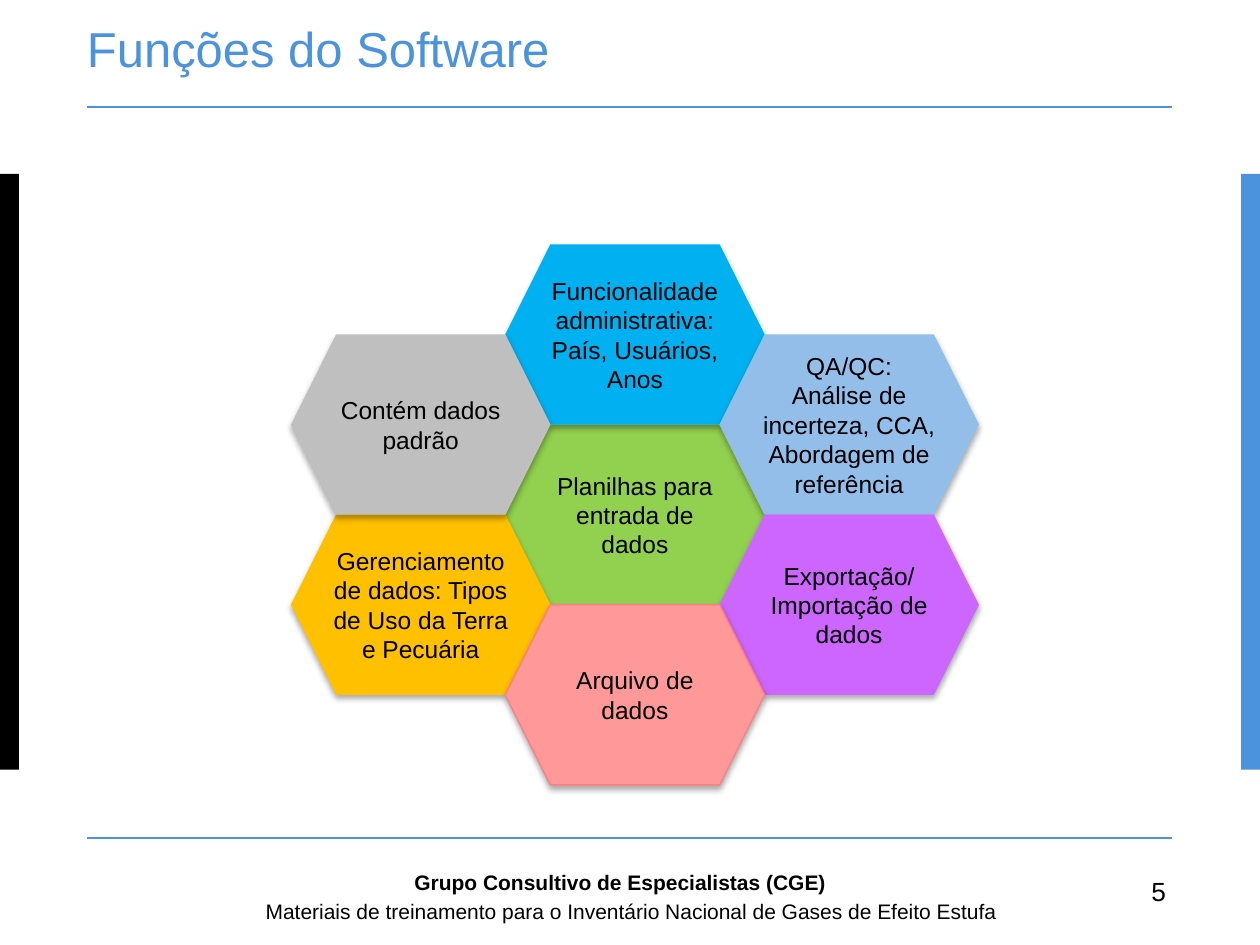
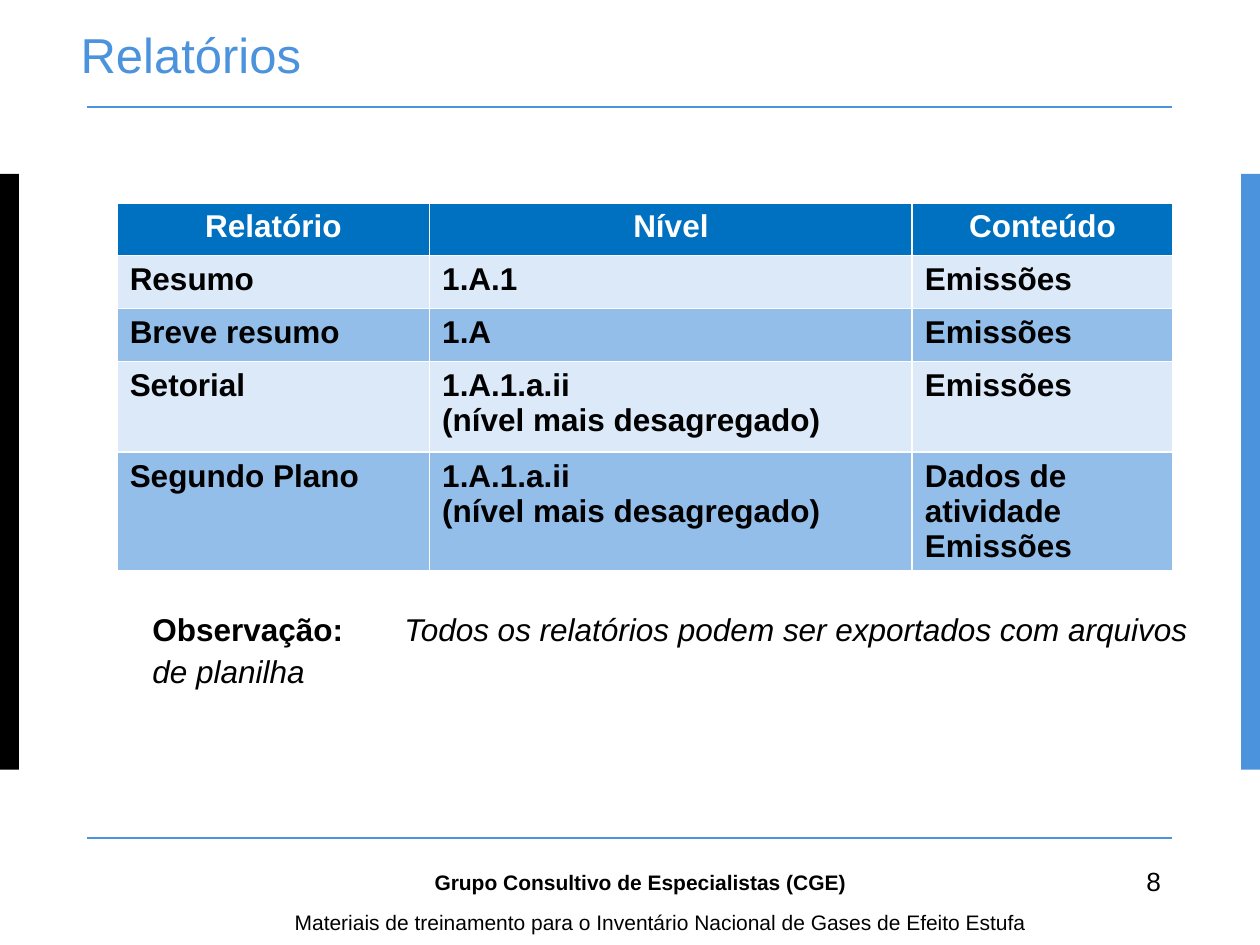
from lxml.etree import SubElement
from pptx import Presentation
from pptx.dml.color import RGBColor
from pptx.enum.shapes import MSO_CONNECTOR, MSO_SHAPE
from pptx.enum.text import MSO_ANCHOR, MSO_AUTO_SIZE, PP_ALIGN
from pptx.oxml.ns import qn
from pptx.util import Inches, Pt

FONT = "Arial"
ACCENT = "4B93DC"
BLACK = "000000"
WHITE = "FFFFFF"
HEADER_BLUE = "0070C0"
PALE_BLUE = "DBE9F8"
MEDIUM_BLUE = "93BEEA"

GROUP_NAME = "Grupo Consultivo de Especialistas (CGE)"
MATERIALS = "Materiais de treinamento para o Inventário Nacional de Gases de Efeito Estufa"

HEXAGON_WIDTH, HEXAGON_HEIGHT = 2.06, 1.43
HEXAGON_LEFT, HEXAGON_TOP = 2.31, 1.94
COLUMN_PITCH = 1.7

FUNCTIONS = [
    ("Planilhas para entrada de dados", 1, 2, "92D050", None),
    ("Gerenciamento de dados: Tipos de Uso da Terra e Pecuária", 0, 3, "FFC000", None),
    ("Funcionalidade administrativa: País, Usuários, Anos", 1, 0, "00B0F0", None),
    ("QA/QC:\vAnálise de incerteza, CCA, Abordagem de referência", 2, 1, MEDIUM_BLUE, None),
    ("Exportação/ Importação de dados", 2, 3, "CC66FF", None),
    ("Arquivo de dados", 1, 4, "FF9999", "FF7C80"),
    ("Contém dados padrão", 0, 1, "BFBFBF", None),
]

REPORTS = [
    ("Relatório", "Nível", "Conteúdo"),
    ("Resumo", "1.A.1", "Emissões"),
    ("Breve resumo", "1.A", "Emissões"),
    ("Setorial", "1.A.1.a.ii\n(nível mais desagregado)", "Emissões"),
    ("Segundo Plano", "1.A.1.a.ii\n(nível mais desagregado)", "Dados de atividade Emissões"),
]
REPORT_COLUMNS = [2.48, 3.83, 2.07]
REPORT_ROWS = [0.42, 0.42, 0.42, 0.72, 0.72]


def color(value):
    return RGBColor.from_string(value)


def inches(*lengths):
    return [Inches(length) for length in lengths]


def style_font(font, size, value, bold=False):
    font.name = FONT
    font.size = Pt(size)
    font.color.rgb = color(value)
    font.bold = bold


def remove_margins(text_frame):
    text_frame.margin_left = text_frame.margin_right = 0
    text_frame.margin_top = text_frame.margin_bottom = 0


def place(shape, left, top, width, height):
    shape.left, shape.top, shape.width, shape.height = inches(left, top, width, height)


def prepare_placeholder(placeholder, box, anchor):
    place(placeholder, *box)
    text_frame = placeholder.text_frame
    remove_margins(text_frame)
    text_frame.word_wrap = True
    text_frame.auto_size = MSO_AUTO_SIZE.NONE
    text_frame.vertical_anchor = anchor
    return text_frame.paragraphs[0]


def set_title(slide, text, box):
    paragraph = prepare_placeholder(slide.shapes.title, box, MSO_ANCHOR.MIDDLE)
    paragraph.text = text
    paragraph.alignment = PP_ALIGN.LEFT
    paragraph.line_spacing = Pt(15)
    style_font(paragraph.font, 28, ACCENT)


def add_band(slide, left, fill):
    band = slide.shapes.add_shape(MSO_SHAPE.RECTANGLE, *inches(left, 1.38, 0.15, 4.73))
    band.shadow.inherit = False
    band.fill.solid()
    band.fill.fore_color.rgb = color(fill)
    band.line.fill.background()


def add_rule(slide, top):
    rule = slide.shapes.add_connector(MSO_CONNECTOR.STRAIGHT, *inches(0.69, top, 9.3, top))
    rule.line.color.rgb = color(ACCENT)
    rule.line.width = Pt(1)
    SubElement(rule.element.spPr, qn("a:effectLst"))


def add_label(slide, text, box, size, bold=False):
    text_frame = slide.shapes.add_textbox(*inches(*box)).text_frame
    text_frame.word_wrap = True
    paragraph = text_frame.paragraphs[0]
    paragraph.text = text
    style_font(paragraph.font, size, BLACK, bold)


def add_framed_slide(presentation, layout_index, title, title_box):
    slide = presentation.slides.add_slide(presentation.slide_layouts[layout_index])
    add_band(slide, 0, BLACK)
    add_band(slide, 9.85, ACCENT)
    for top in (0.85, 6.65):
        add_rule(slide, top)
    set_title(slide, title, title_box)
    return slide


def add_footer(slide, number, number_box, materials_box, group_box):
    add_label(slide, number, number_box, 15)
    add_label(slide, MATERIALS, materials_box, 12)
    add_label(slide, GROUP_NAME, group_box, 12, bold=True)


def add_soft_shadow(shape):
    shape.shadow.inherit = False
    effects = shape.element.spPr.find(qn("a:effectLst"))
    shadow = SubElement(
        effects, qn("a:outerShdw"), blurRad=str(Pt(3.5)), dist=str(Pt(2.2)),
        dir="5400000", rotWithShape="0",
    )
    shade = SubElement(shadow, qn("a:srgbClr"), val=BLACK)
    SubElement(shade, qn("a:alpha"), val="32000")


def add_hexagon(slide, text, column, half_row, fill, outline):
    left = HEXAGON_LEFT + column * COLUMN_PITCH
    top = HEXAGON_TOP + half_row * HEXAGON_HEIGHT / 2
    hexagon = slide.shapes.add_shape(
        MSO_SHAPE.HEXAGON, *inches(left, top, HEXAGON_WIDTH, HEXAGON_HEIGHT)
    )
    hexagon.fill.solid()
    hexagon.fill.fore_color.rgb = color(fill)
    if outline:
        hexagon.line.color.rgb = color(outline)
        hexagon.line.width = Pt(0.75)
    else:
        hexagon.line.fill.background()
    add_soft_shadow(hexagon)
    text_frame = hexagon.text_frame
    remove_margins(text_frame)
    text_frame.word_wrap = True
    text_frame.vertical_anchor = MSO_ANCHOR.MIDDLE
    paragraph = text_frame.paragraphs[0]
    paragraph.text = text
    paragraph.alignment = PP_ALIGN.CENTER
    style_font(paragraph.font, 14, BLACK)


def add_cell_borders(cell):
    properties = cell._tc.get_or_add_tcPr()
    for side in ("lnL", "lnR", "lnT", "lnB"):
        border = SubElement(properties, qn(f"a:{side}"), w=str(Pt(1)))
        fill = SubElement(border, qn("a:solidFill"))
        SubElement(fill, qn("a:srgbClr"), val=WHITE)


def fill_cell(cell, text, row_index):
    is_header = row_index == 0
    add_cell_borders(cell)
    cell.fill.solid()
    band = PALE_BLUE if row_index % 2 else MEDIUM_BLUE
    cell.fill.fore_color.rgb = color(HEADER_BLUE if is_header else band)
    cell.text_frame.text = text
    for paragraph in cell.text_frame.paragraphs:
        paragraph.alignment = PP_ALIGN.CENTER if is_header else PP_ALIGN.LEFT
        style_font(paragraph.font, 18, WHITE if is_header else BLACK, bold=True)


def add_report_table(slide):
    table = slide.shapes.add_table(
        len(REPORTS), len(REPORT_COLUMNS),
        *inches(0.93, 1.61, sum(REPORT_COLUMNS), sum(REPORT_ROWS)),
    ).table
    for column, width in zip(table.columns, REPORT_COLUMNS):
        column.width = Inches(width)
    for row, height in zip(table.rows, REPORT_ROWS):
        row.height = Inches(height)
    for row_index, report in enumerate(REPORTS):
        for column_index, text in enumerate(report):
            fill_cell(table.cell(row_index, column_index), text, row_index)


def set_note(slide, heading, text):
    box = (1.21, 4.81, 8.35, 0.81)
    paragraph = prepare_placeholder(slide.placeholders[1], box, MSO_ANCHOR.TOP)
    properties = paragraph._p.get_or_add_pPr()
    properties.set("marL", "0")
    properties.set("indent", "0")
    SubElement(properties, qn("a:buNone"))
    tabs = SubElement(properties, qn("a:tabLst"))
    SubElement(tabs, qn("a:tab"), pos=str(Inches(1.73)), algn="l")
    paragraph.line_spacing = Pt(24)
    paragraph.space_before = Pt(0)
    style_font(paragraph.font, 18, BLACK)
    heading_run = paragraph.add_run()
    heading_run.text = heading + "\t"
    heading_run.font.bold = True
    text_run = paragraph.add_run()
    text_run.text = text
    text_run.font.italic = True


def build_functions_slide(presentation):
    slide = add_framed_slide(presentation, 5, "Funções do Software", (0.69, 0.34, 8.61, 0.34))
    for function in FUNCTIONS:
        add_hexagon(slide, *function)
    add_footer(
        slide, "5", (9.04, 6.9, 0.31, 0.35), (2.01, 7.08, 6.59, 0.23), (3.19, 6.85, 3.78, 0.27)
    )


def build_reports_slide(presentation):
    slide = add_framed_slide(presentation, 1, "Relatórios", (0.64, 0.06, 8.67, 1))
    set_note(
        slide, "Observação:",
        "Todos os relatórios podem ser exportados com arquivos de planilha",
    )
    add_report_table(slide)
    add_footer(
        slide, "8", (9, 6.82, 0.31, 0.35), (2.24, 7.17, 6.35, 0.14), (3.35, 6.85, 3.62, 0.27)
    )


def main():
    presentation = Presentation()
    presentation.slide_width, presentation.slide_height = inches(10, 7.5)
    build_functions_slide(presentation)
    build_reports_slide(presentation)
    presentation.save("out.pptx")


if __name__ == "__main__":
    main()
